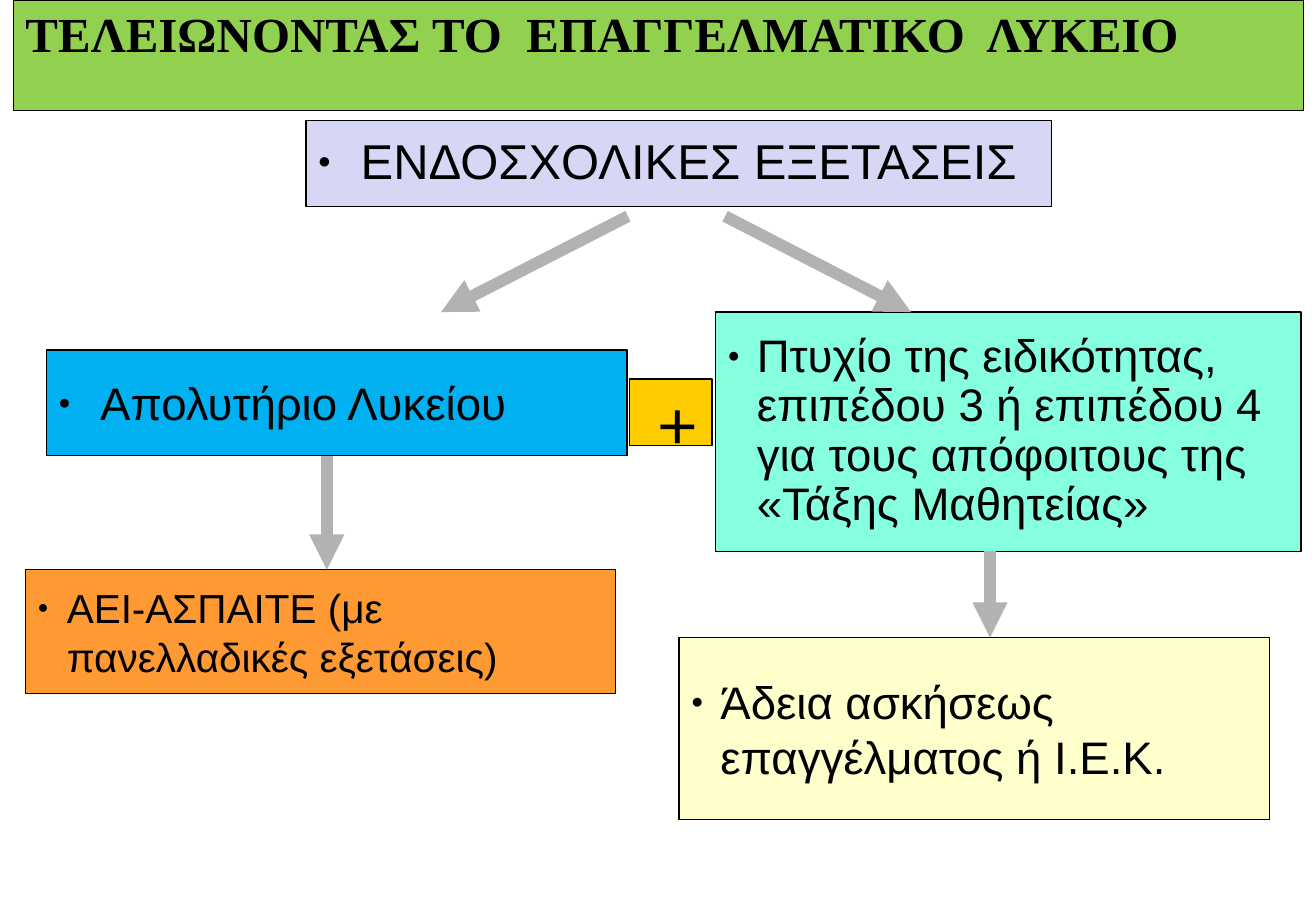
"""Build a one-slide flow chart of the paths open after vocational school."""
import dataclasses
import typing

import pptx
import pptx.dml.color
import pptx.enum.shapes
import pptx.enum.text
import pptx.oxml
import pptx.oxml.ns
import pptx.shapes.autoshape
import pptx.slide
import pptx.util

Pt = pptx.util.Pt
Align = pptx.enum.text.PP_ALIGN
Anchor = pptx.enum.text.MSO_ANCHOR


@dataclasses.dataclass(frozen=True)
class Theme:
    ink: str = "000000"
    head: str = "92D050"
    exam: str = "D6D6F5"
    blue: str = "00B0F0"
    mint: str = "85FFE0"
    gold: str = "FFCC00"
    warm: str = "FF9933"
    cream: str = "FFFFCC"
    arrow: str = "B2B2B2"
    sans: str = "Arial"
    serif: str = "Times New Roman"
    sign: str = "Montserrat"
    large: float = 29
    mid: float = 27
    small: float = 24
    huge: float = 46
    edge: float = 0.75
    shaft: float = 7


THEME = Theme()


@dataclasses.dataclass(frozen=True)
class Box:
    text: str
    left: float
    top: float
    width: float
    height: float
    fill: str
    size: float = THEME.mid
    font: str = THEME.sans
    bold: bool = False
    align: Align = Align.LEFT
    anchor: Anchor = Anchor.MIDDLE
    inset: float = 3.6
    space: float = 1.0
    hang: float = 0


class Arrow(typing.NamedTuple):
    left: float
    top: float
    right: float
    foot: float


TITLE = Box("ΤΕΛΕΙΩΝΟΝΤΑΣ ΤΟ  ΕΠΑΓΓΕΛΜΑΤΙΚΟ  ΛΥΚΕΙΟ", 7.9, 0, 764.6, 65.5, THEME.head,
            THEME.large, THEME.serif, bold=True, anchor=Anchor.TOP, inset=2)
EXAM = Box("ΕΝΔΟΣΧΟΛΙΚΕΣ ΕΞΕΤΑΣΕΙΣ", 181.4, 71.3, 442.1, 51.1, THEME.exam,
           THEME.large, space=0.9, hang=25.3)
PLUS = Box("+", 373, 224.6, 49, 39.6, THEME.gold, THEME.huge, THEME.sign,
           align=Align.RIGHT, space=1.25)
LISTS = [
    Box("Απολυτήριο Λυκείου", 27.4, 207.4, 344.2, 62.6, THEME.blue, hang=24.8),
    Box("Πτυχίο της ειδικότητας, επιπέδου 3 ή επιπέδου 4 για τους απόφοιτους της "
        "«Τάξης Μαθητείας»", 424.1, 185, 347, 141.8, THEME.mint, space=0.9, hang=17.3),
    Box("ΑΕΙ-ΑΣΠΑΙΤΕ (με πανελλαδικές εξετάσεις)", 15.1, 337.7, 349.9, 73.4,
        THEME.warm, THEME.small, hang=17.3),
    Box("Άδεια ασκήσεως επαγγέλματος ή Ι.Ε.Κ.", 402.5, 378, 349.9, 108,
        THEME.cream, hang=17.3),
]
ARROWS = [
    Arrow(372.2, 128.2, 261.4, 185),
    Arrow(429.8, 128.2, 540, 185),
    Arrow(586.8, 326.9, 586.8, 378),
    Arrow(193.7, 270, 193.7, 337.7),
]


def tint(code: str) -> pptx.dml.color.RGBColor:
    return pptx.dml.color.RGBColor.from_string(code)


def parts(tags: str) -> list[typing.Any]:
    space = pptx.oxml.ns.nsdecls("a")
    return list(pptx.oxml.parse_xml(f"<a:group {space}>{tags}</a:group>"))


def style(shape: pptx.shapes.autoshape.Shape, box: Box) -> None:
    shape.left, shape.top = Pt(box.left), Pt(box.top)
    shape.width, shape.height = Pt(box.width), Pt(box.height)
    shape.shadow.inherit = False
    shape.fill.solid()
    shape.fill.fore_color.rgb = tint(box.fill)
    shape.line.color.rgb = tint(THEME.ink)
    shape.line.width = Pt(THEME.edge)
    frame = shape.text_frame
    frame.word_wrap = True
    frame.auto_size = pptx.enum.text.MSO_AUTO_SIZE.NONE
    frame.vertical_anchor = box.anchor
    frame.margin_left = frame.margin_right = Pt(7.2)
    frame.margin_top = frame.margin_bottom = Pt(box.inset)
    line = frame.paragraphs[0]
    line.alignment = box.align
    line.line_spacing = box.space
    line.space_before = Pt(0)
    if box.hang:
        props = line._p.get_or_add_pPr()
        props.set("marL", str(Pt(box.hang)))
        props.set("indent", str(-Pt(box.hang)))
        props.extend(parts(
            f'<a:buClr><a:srgbClr val="{THEME.ink}"/></a:buClr>'
            f'<a:buSzPct val="45000"/><a:buFont typeface="{THEME.sans}"/>'
            '<a:buChar char="●"/>'))
    run = line.add_run()
    run.text = box.text
    run.font.name = box.font
    run.font.size = Pt(box.size)
    run.font.bold = box.bold
    run.font.color.rgb = tint(THEME.ink)


def draw(slide: pptx.slide.Slide, box: Box) -> None:
    kind = pptx.enum.shapes.MSO_SHAPE.RECTANGLE
    style(slide.shapes.add_shape(kind, 0, 0, 0, 0), box)


def point(slide: pptx.slide.Slide, arrow: Arrow) -> None:
    kind = pptx.enum.shapes.MSO_CONNECTOR.STRAIGHT
    link = slide.shapes.add_connector(kind, *map(Pt, arrow))
    link.line.color.rgb = tint(THEME.arrow)
    link.line.width = Pt(THEME.shaft)
    link.line._get_or_add_ln().extend(parts('<a:tailEnd type="triangle"/>'))
    link._element.spPr.extend(parts("<a:effectLst/>"))


def main() -> None:
    deck = pptx.Presentation()
    deck.slide_width, deck.slide_height = Pt(780), Pt(540)
    slide = deck.slides.add_slide(deck.slide_layouts.get_by_name("Comparison"))
    for shape, box in zip(slide.placeholders, [TITLE, *LISTS]):
        style(shape, box)
    for box in (EXAM, PLUS):
        draw(slide, box)
    for arrow in ARROWS:
        point(slide, arrow)
    deck.save("out.pptx")


if __name__ == "__main__":
    main()
